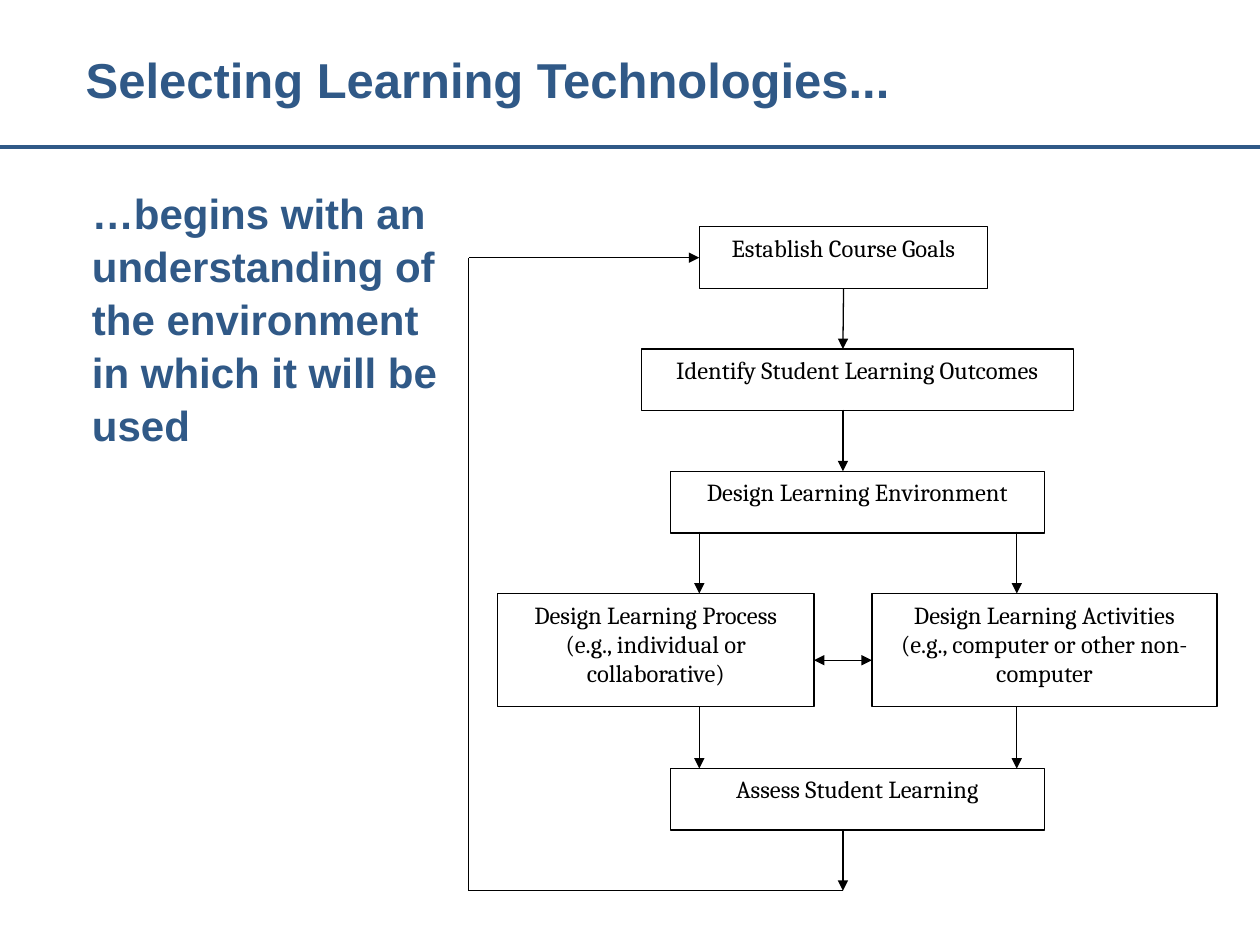
from dataclasses import dataclass

from lxml import etree
from pptx import Presentation
from pptx.dml.color import RGBColor
from pptx.enum import shapes, text
from pptx.oxml import ns
from pptx.util import Inches, Pt


@dataclass(frozen=True)
class Theme:
    blue: RGBColor = RGBColor(0x30, 0x59, 0x87)
    black: RGBColor = RGBColor(0, 0, 0)
    white: RGBColor = RGBColor(255, 255, 255)
    head: dict = None
    lead: dict = None
    step: dict = None


def font(name, size, bold):
    return {"name": name, "size": Pt(size), "bold": bold}


T = Theme(head=font("Arial", 28, True), lead=font("Arial", 24, True),
          step=font("Cambria", 14, False))

PITCH, HIGH = 0.97, 0.49
MID, LEFT, RIGHT = 2.97, 1.83, 4.35  # arrow columns inside the chart
# name: (left, row, width, height, paragraphs)
STEPS = {
    "goals": (1.83, 0, 2.29, HIGH, ["Establish Course Goals"]),
    "outcomes": (1.37, 1, 3.43, HIGH, ["Identify Student Learning Outcomes"]),
    "setting": (1.6, 2, 2.97, HIGH, ["Design Learning Environment"]),
    "process": (0.23, 3, 2.51, 0.9,
                ["Design Learning Process",
                 "(e.g., individual or collaborative)"]),
    "tasks": (3.2, 3, 2.74, 0.9,
              ["Design Learning Activities",
               "(e.g., computer or other non-computer"]),
    "assess": (1.6, 4.43, 2.97, HIGH, ["Assess Student Learning"]),
}


def write(frame, lines, style, color, align):
    frame.word_wrap = True
    for i, line in enumerate(lines):
        para = frame.paragraphs[0] if i == 0 else frame.add_paragraph()
        para.alignment = align
        run = para.add_run()
        run.text = line
        for key, value in style.items():
            setattr(run.font, key, value)
        run.font.color.rgb = color


def rule(slide, start, end, color=T.black, width=0.75, ends=()):
    """Draw a straight line; ends lists headEnd and/or tailEnd for arrows."""
    line = slide.shapes.add_connector(
        shapes.MSO_CONNECTOR.STRAIGHT, *map(Inches, (*start, *end)))
    line.line.color.rgb = color
    line.line.width = Pt(width)
    stroke = line.line._get_or_add_ln()
    for end_tag in ends:
        etree.SubElement(stroke, ns.qn("a:" + end_tag), type="triangle")
    etree.SubElement(line._element.spPr, ns.qn("a:effectLst"))
    return line


def header(slide, x, y, w, h):
    rule(slide, (0, 1.17), (10, 1.17), T.blue, 2.25)
    title = slide.shapes.title
    spot = dict(zip(("left", "top", "width", "height"),
                    map(Inches, (x, y, w, h))))
    for key, value in spot.items():
        setattr(title, key, value)
    write(title.text_frame, ["Selecting Learning Technologies..."],
          T.head, T.blue, text.PP_ALIGN.LEFT)
    title.text_frame.vertical_anchor = text.MSO_ANCHOR.MIDDLE


def lead(slide, x, y, w, h):
    frame = slide.shapes.add_textbox(*map(Inches, (x, y, w, h))).text_frame
    frame.margin_left = Inches(0.48)
    write(frame, ["…begins with an understanding of the environment "
                  "in which it will be used"],
          T.lead, T.blue, text.PP_ALIGN.LEFT)
    frame.paragraphs[0].line_spacing = 1.05


def step(slide, x, y, w, h, lines):
    box = slide.shapes.add_shape(shapes.MSO_SHAPE.RECTANGLE,
                                 *map(Inches, (x, y, w, h)))
    box.shadow.inherit = False
    box.fill.solid()
    box.fill.fore_color.rgb = T.white
    box.line.color.rgb = T.black
    box.line.width = Pt(0.75)
    write(box.text_frame, lines, T.step, T.black, text.PP_ALIGN.CENTER)
    box.text_frame.vertical_anchor = text.MSO_ANCHOR.TOP
    return box


def flow(slide, x, y, w, h):
    """Place the step boxes, the arrows between them and the return loop."""
    boxes = {name: step(slide, x + dx, y + row * PITCH, bw, bh, lines)
             for name, (dx, row, bw, bh, lines) in STEPS.items()}

    def link(x1, y1, x2, y2, *ends):
        return rule(slide, (x + x1, y + y1), (x + x2, y + y2), ends=ends)

    def down(col, low):
        return link(col, low - HIGH, col, low, "tailEnd")

    down(MID, PITCH).begin_connect(boxes["goals"], 2)
    for col, low in ((MID, 2 * PITCH), (LEFT, 3 * PITCH), (RIGHT, 3 * PITCH),
                     (LEFT, 4.3), (RIGHT, 4.3), (MID, h)):
        down(col, low)
    link(2.74, 3.44, 3.2, 3.44, "headEnd", "tailEnd")

    link(MID, h, 0, h)
    link(0, h, 0, HIGH / 2)
    back = link(0, HIGH / 2, LEFT, HIGH / 2, "tailEnd")
    back.end_connect(boxes["goals"], 1)


def main():
    deck = Presentation()
    deck.slide_width, deck.slide_height = Inches(10), Inches(7.5)
    slide = deck.slides.add_slide(deck.slide_layouts[5])
    header(slide, 0.58, 0.25, 9.08, 0.75)
    lead(slide, 0.25, 1.42, 3.42, 5.58)
    flow(slide, 3.72, 1.8, 5.94, 5.27)
    deck.save("out.pptx")


if __name__ == "__main__":
    main()
